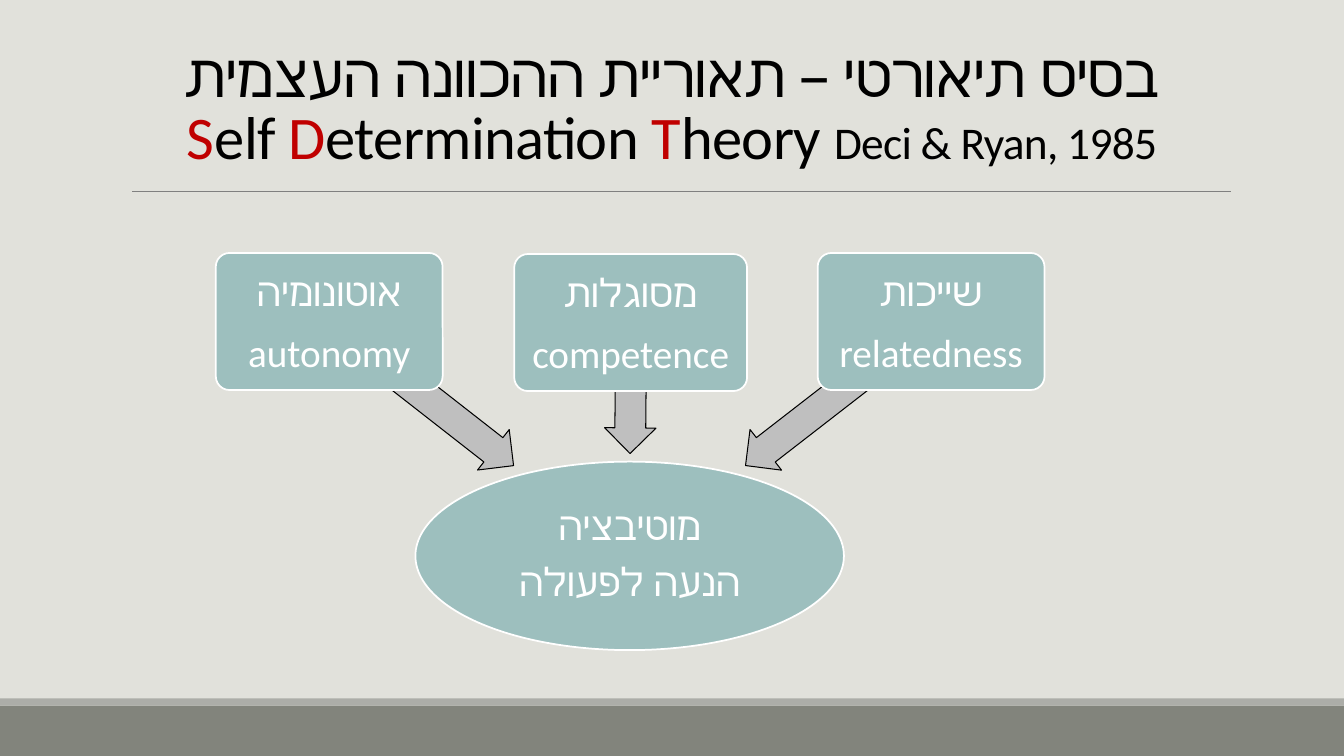
from pptx import Presentation
from pptx.dml.color import RGBColor
from pptx.enum.shapes import MSO_CONNECTOR, MSO_SHAPE
from pptx.enum.text import MSO_ANCHOR, PP_ALIGN
from pptx.oxml.ns import qn
from pptx.util import Inches, Pt
from lxml import etree

FONT = "Calibri"
BACKGROUND = RGBColor(0xE1, 0xE1, 0xDB)
FOOTER = RGBColor(0x82, 0x84, 0x7C)
FOOTER_EDGE = RGBColor(0xAC, 0xAD, 0xA8)
RULE = RGBColor(0x80, 0x80, 0x80)
TEAL = RGBColor(0x9D, 0xBF, 0xBE)
ARROW = RGBColor(0xBF, 0xBF, 0xBF)
RED = RGBColor(0xC0, 0x00, 0x00)
BLACK = RGBColor(0, 0, 0)
WHITE = RGBColor(0xFF, 0xFF, 0xFF)

deck = Presentation()
deck.slide_width = Inches(13.33)
deck.slide_height = Inches(7.5)
page = deck.slides.add_slide(deck.slide_layouts[6])
page.background.fill.solid()
page.background.fill.fore_color.rgb = BACKGROUND


def add_block(kind, left, top, width, height, fill, line=None, weight=1.25):
    block = page.shapes.add_shape(
        kind, Inches(left), Inches(top), Inches(width), Inches(height))
    block.shadow.inherit = False
    block.fill.solid()
    block.fill.fore_color.rgb = fill
    if line is None:
        block.line.fill.background()
    else:
        block.line.color.rgb = line
        block.line.width = Pt(weight)
    return block


def write_lines(block, lines, inset, line_spacing):
    frame = block.text_frame
    frame.word_wrap = True
    frame.vertical_anchor = MSO_ANCHOR.MIDDLE
    frame.margin_left = frame.margin_right = Inches(inset)
    frame.margin_top = frame.margin_bottom = Inches(inset)
    for index, line in enumerate(lines):
        para = frame.paragraphs[0] if index == 0 else frame.add_paragraph()
        para.alignment = PP_ALIGN.CENTER
        para.line_spacing = line_spacing
        para.space_after = Pt(9.8)
        para.font.name = FONT
        para.font.size = Pt(28)
        para.font.color.rgb = WHITE
        para.add_run().text = line


# Footer band and the rule under the title
add_block(MSO_SHAPE.RECTANGLE, 0, 7, 13.33, 0.5, FOOTER)
add_block(MSO_SHAPE.RECTANGLE, 0, 6.93, 13.33, 0.07, FOOTER_EDGE)
rule = page.shapes.add_connector(
    MSO_CONNECTOR.STRAIGHT, Inches(1.31), Inches(1.9), Inches(12.21), Inches(1.9))
rule.line.color.rgb = RULE
rule.line.width = Pt(0.5)
etree.SubElement(rule._element.spPr, qn("a:effectLst"))

# Title
box = page.shapes.add_textbox(Inches(0), Inches(0.3), Inches(13.33), Inches(1.45))
box.text_frame.word_wrap = True
box.text_frame.vertical_anchor = MSO_ANCHOR.BOTTOM
para = box.text_frame.paragraphs[0]
para.alignment = PP_ALIGN.CENTER
para.line_spacing = 0.85
para._p.get_or_add_pPr().set("rtl", "1")
title_spans = [
    ("בסיס תיאורטי – תאוריית ההכוונה העצמית", BLACK, 43.2),
    ("S", RED, 43.2), ("elf ", BLACK, 43.2),
    ("D", RED, 43.2), ("etermination ", BLACK, 43.2),
    ("T", RED, 43.2), ("heory ", BLACK, 43.2),
    ("Deci & Ryan, 1985", BLACK, 32.4),
]
for index, (text, color, size) in enumerate(title_spans):
    if index == 1:
        para.add_line_break()
    span = para.add_run()
    span.text = text
    span.font.name = FONT
    span.font.size = Pt(size)
    span.font.color.rgb = color
    span.font._element.set("spc", "-50")

# Motivation
motivation = add_block(MSO_SHAPE.OVAL, 4.12, 4.58, 4.25, 1.87, TEAL, WHITE)
write_lines(motivation, ["מוטיבציה", "הנעה לפעולה"], 0.02, 0.9)

# Three needs, each over the arrow that leads to motivation
needs = [
    (["אוטונומיה", "autonomy"], (2.14, 2.51, 2.25), (3.02, 3.65, 2.32), 218),
    (["מסוגלות", "competence"], (5.1, 2.52, 2.31), (5.6, 3.59, 1.31), 270.5),
    (["שייכות", "relatedness"], (8.11, 2.51, 2.25), (7.15, 3.65, 2.33), 322.2),
]
for lines, need_place, arrow_place, angle in needs:
    arrow = add_block(MSO_SHAPE.LEFT_ARROW, *arrow_place, 0.51, ARROW, BLACK, 0.75)
    arrow.adjustments[0] = 0.6
    arrow.adjustments[1] = 0.5
    arrow.rotation = angle
    need = add_block(MSO_SHAPE.ROUNDED_RECTANGLE, *need_place, 1.36, TEAL, WHITE)
    need.adjustments[0] = 0.1
    write_lines(need, lines, 0.06, 1.0)

deck.save("out.pptx")
